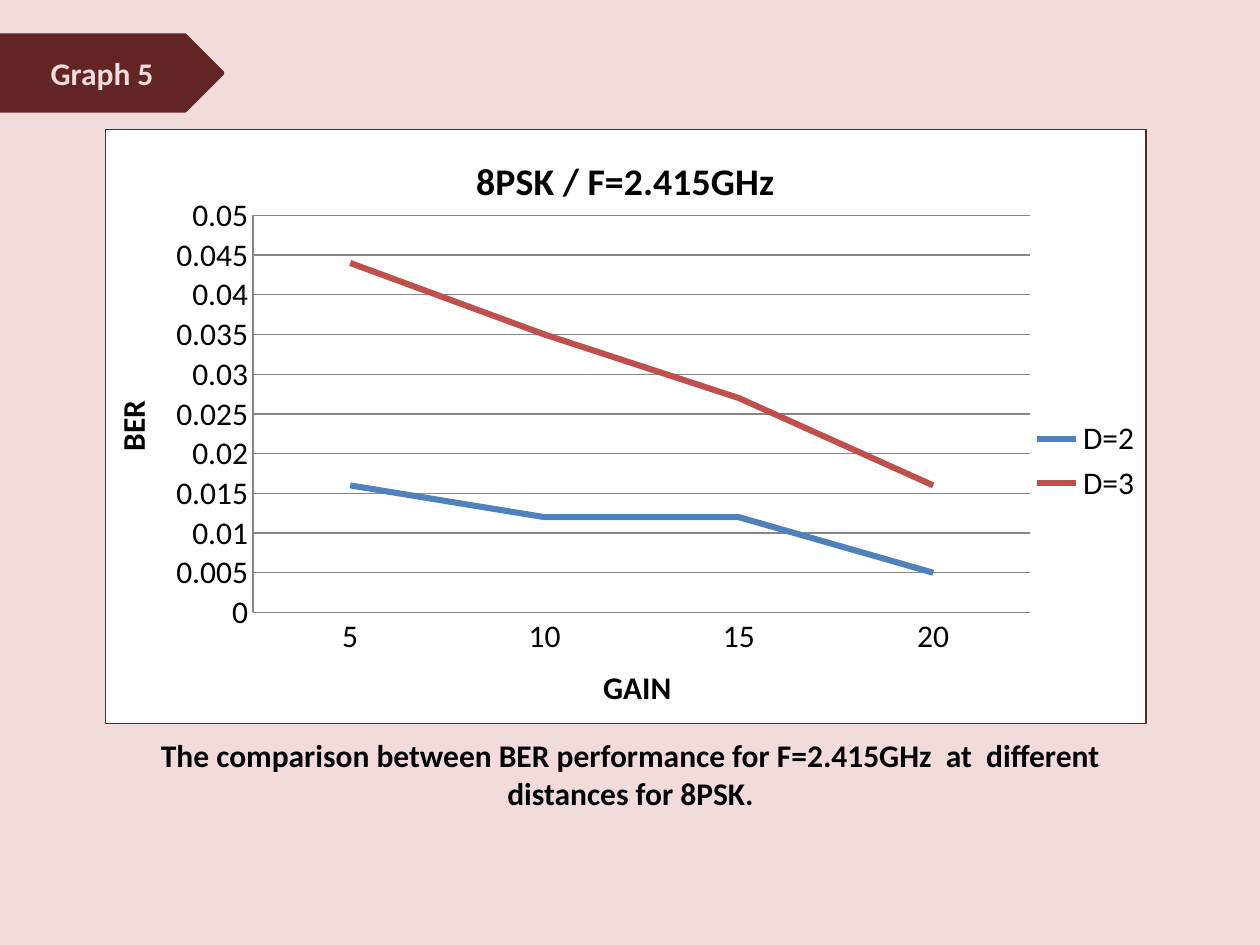
from dataclasses import dataclass

from lxml import etree
from pptx import Presentation
from pptx import util as u
from pptx.chart import data
from pptx.dml.color import RGBColor
from pptx.enum import chart as ch, shapes, text
from pptx.oxml import parse_xml
from pptx.oxml.ns import nsdecls, qn

HUES = {"back": "F2DCDB", "dark": "632523", "white": "FFFFFF", "black": "000000",
        "grid": "868686", "blue": "4F81BD", "red": "C0504D"}
FACE = "Calibri"


@dataclass
class Curve:
    name: str
    vals: tuple[float, ...]
    hue: str


@dataclass
class Box:
    x: float
    y: float
    w: float
    h: float

    def dims(self) -> list[int]:
        return [u.Inches(n) for n in (self.x, self.y, self.w, self.h)]


CURVES = [
    Curve("D=2", (0.016, 0.012, 0.012, 0.005), "blue"),
    Curve("D=3", (0.044, 0.035, 0.027, 0.016), "red"),
]


def tint(hue: str) -> RGBColor:
    return RGBColor.from_string(HUES[hue])


def style(font, size: float = 18, hue: str = "black", bold: bool = True) -> None:
    font.name, font.size, font.bold = FACE, u.Pt(size), bold
    font.color.rgb = tint(hue)


def label(frame, words: str, size: float = 18, hue: str = "black") -> None:
    frame.text = words
    para = frame.paragraphs[0]
    para.alignment = text.PP_ALIGN.CENTER
    style(para.font, size, hue)


def stroke(line, hue: str, width: float = 0.75) -> None:
    line.color.rgb = tint(hue)
    line.width = u.Pt(width)


def place(part, slot: int, **marks: str | float) -> None:
    """Give a chart part a manual layout, as its child number slot."""
    for old in part.findall(qn("c:layout")):
        part.remove(old)
    layout = etree.Element(qn("c:layout"))
    manual = etree.SubElement(layout, qn("c:manualLayout"))
    for tag, val in marks.items():
        etree.SubElement(manual, qn("c:" + tag)).set("val", str(val))
    part.insert(slot, layout)


def set_axis(axis, words: str) -> None:
    axis.major_tick_mark = axis.minor_tick_mark = ch.XL_TICK_MARK.NONE
    stroke(axis.format.line, "grid")
    label(axis.axis_title.text_frame, words)


def set_frame(chart) -> None:
    """Fill and border of the chart area."""
    space = chart._chartSpace
    space.find(qn("c:chart")).addnext(parse_xml(
        f'<c:spPr {nsdecls("c", "a")}>'
        f'<a:solidFill><a:srgbClr val="{HUES["white"]}"/></a:solidFill>'
        f'<a:ln w="{u.Pt(0.75)}"><a:solidFill><a:srgbClr val="{HUES["dark"]}"/>'
        '</a:solidFill></a:ln></c:spPr>'))


def add_graph(slide, box: Box, curves: list[Curve]) -> None:
    feed = data.CategoryChartData()
    feed.categories = ["5", "10", "15", "20"]
    for curve in curves:
        feed.add_series(curve.name, curve.vals)
    chart = slide.shapes.add_chart(ch.XL_CHART_TYPE.LINE, *box.dims(), feed).chart
    style(chart.font, bold=False)
    set_frame(chart)
    label(chart.chart_title.text_frame, "8PSK / F=2.415GHz", 21.6)
    chart.chart_title.include_in_layout = False

    # Axes
    set_axis(chart.category_axis, "GAIN")
    axis = chart.value_axis
    set_axis(axis, "BER")
    axis.minimum_scale, axis.maximum_scale, axis.major_unit = 0, 0.05, 0.005
    axis.tick_labels.number_format = "General"
    axis.tick_labels.number_format_is_linked = False
    stroke(axis.major_gridlines.format.line, "grid")

    # Legend and lines
    chart.has_legend = True
    chart.legend.position = ch.XL_LEGEND_POSITION.RIGHT
    chart.legend.include_in_layout = False
    chart.plots[0].vary_by_categories = False
    for series, curve in zip(chart.plots[0].series, curves):
        series.smooth = False
        series.marker.style = ch.XL_MARKER_STYLE.NONE
        stroke(series.format.line, curve.hue, 3.5)

    # Places inside the chart, as shares of its size
    edge = {"xMode": "edge", "yMode": "edge"}
    area = chart._chartSpace.find(".//" + qn("c:plotArea"))
    place(area, 0, layoutTarget="inner", **edge, x=0.142, y=0.145, w=0.747, h=0.668)
    place(chart.category_axis.axis_title._element, 1, **edge, x=0.473, y=0.892)
    place(chart.legend._element, 1, **edge, x=0.885, y=0.478)


def add_tag(slide, box: Box, words: str) -> None:
    plate = slide.shapes.add_shape(shapes.MSO_SHAPE.PENTAGON, *box.dims())
    plate.shadow.inherit = False
    plate.fill.solid()
    plate.fill.fore_color.rgb = tint("dark")
    stroke(plate.line, "dark", 2)

    # The title sits on the plate, clear of half its point
    title = slide.shapes.title
    title.left, title.top, title.width, title.height = Box(
        box.x, box.y, box.w - box.h / 4, box.h).dims()
    title.text_frame.vertical_anchor = text.MSO_ANCHOR.MIDDLE
    label(title.text_frame, words, hue="back")
    plate.element.addnext(title.element)


def add_note(slide, box: Box, words: str) -> None:
    frame = slide.shapes.add_textbox(*box.dims()).text_frame
    frame.word_wrap = True
    frame.auto_size = text.MSO_AUTO_SIZE.SHAPE_TO_FIT_TEXT
    label(frame, words)


def main() -> None:
    deck = Presentation()
    deck.slide_width, deck.slide_height = u.Inches(10), u.Inches(7.5)
    slide = deck.slides.add_slide(deck.slide_layouts[5])

    # Backdrop
    fill = slide.background.fill
    fill.solid()
    fill.fore_color.rgb = tint("back")

    # Chart, caption and title tag
    add_graph(slide, Box(0.83, 1.02, 8.27, 4.73), CURVES)
    add_note(slide, Box(0.87, 5.79, 8.27, 0.75),
             "The comparison between BER performance for F=2.415GHz  at  different "
             "distances for 8PSK.")
    add_tag(slide, Box(0, 0.28, 1.77, 0.6), "Graph 5")
    deck.save("out.pptx")


if __name__ == "__main__":
    main()
